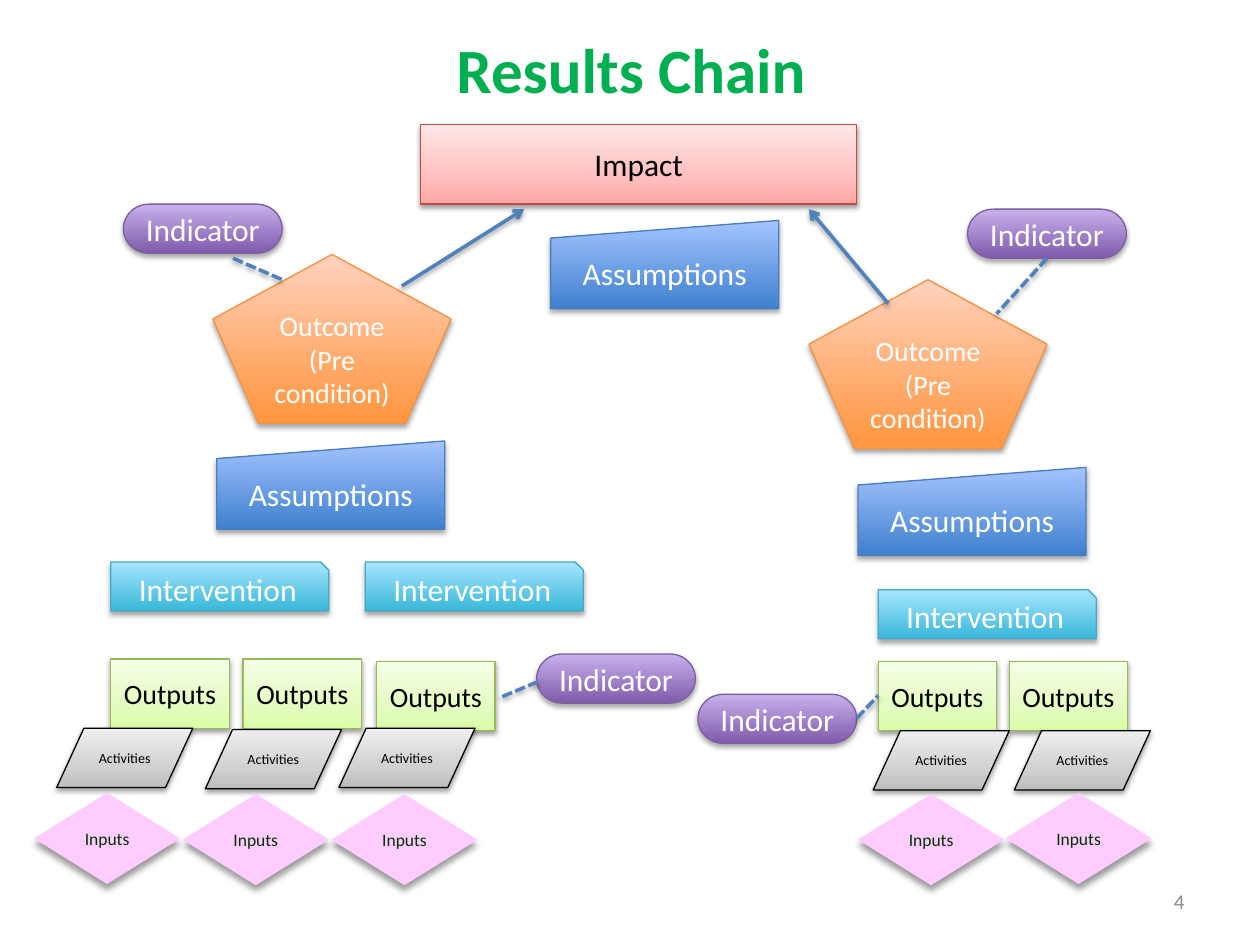
from lxml.etree import SubElement
from pptx import Presentation
from pptx.dml.color import RGBColor
from pptx.enum.dml import MSO_LINE
from pptx.enum.shapes import MSO_CONNECTOR, MSO_SHAPE as S
from pptx.enum.text import MSO_ANCHOR, PP_ALIGN
from pptx.oxml.ns import qn
from pptx.util import Inches, Pt

HUE = {
    "title": "00B050", "page": "8C8C8C", "black": "000000", "white": "FFFFFF",
    "link": "4F81BD", "forest": "003300", "pink": "FFCCFF",
    "red": "BF4C48", "orange": "F69240", "purple": "7D60A0",
    "blue": "4B7EBC", "aqua": "46AAC5", "green": "98B955",
}
# Gradient stops from bottom to top: percent, colour
FADE = {
    "red": [(0, "FFA6A5"), (35, "FFC0BF"), (100, "FFE7E7")],
    "orange": [(0, "FF953E"), (100, "FFD2BD")],
    "purple": [(0, "7F5BAB"), (100, "C8B0ED")],
    "blue": [(0, "3F80CE"), (100, "A4C4FF")],
    "aqua": [(0, "39B7D8"), (100, "A7E6FF")],
    "green": [(0, "DAFDA7"), (35, "E4FCC2"), (100, "F5FFE7")],
    "black": [(0, "BDBDBD"), (35, "D1D1D1"), (100, "EEEEEE")],
}
# Shadows: opacity percent, blur and distance in points
SOFT, DEEP, WIDE = (38, 3.1, 1.6), (35, 3.1, 1.8), (40, 4, 3)

# Each kind of box: text, shape, size, hue, text size, text hue, shadow, spots
KINDS = [
    ("Impact", S.RECTANGLE, (3.46, 0.63), "red", 18, "black", SOFT,
     [(3.34, 0.99)]),
    ("Outcome (Pre condition)", S.REGULAR_PENTAGON, (1.89, 1.34), "orange",
     16, "white", DEEP, [(1.69, 2.02), (6.42, 2.22)]),
    ("Indicator", S.FLOWCHART_TERMINATOR, (1.26, 0.39), "purple", 18, "white",
     DEEP, [(0.98, 1.62), (7.68, 1.66), (4.26, 5.19), (5.54, 5.51)]),
    ("Assumptions", S.FLOWCHART_MANUAL_INPUT, (1.81, 0.7), "blue", 18,
     "white", DEEP, [(4.37, 1.75), (6.81, 3.71), (1.72, 3.5)]),
    ("Intervention", S.SNIP_1_RECTANGLE, (1.73, 0.39), "aqua", 18, "white",
     DEEP, [(0.88, 4.46), (2.9, 4.46), (6.97, 4.68)]),
    ("Outputs", S.RECTANGLE, (0.94, 0.55), "green", 16, "black", SOFT,
     [(0.88, 5.23), (1.93, 5.23), (2.99, 5.25), (6.97, 5.25), (8.01, 5.25)]),
    ("Activities", S.FLOWCHART_DATA, (1.08, 0.47), "black", 8, "black", SOFT,
     [(0.45, 5.78), (1.63, 5.79), (2.69, 5.78), (6.93, 5.8), (8.05, 5.8)]),
    ("Inputs", S.FLOWCHART_DECISION, (1.14, 0.71), "pink", 10, "forest", WIDE,
     [(0.28, 6.3), (1.46, 6.31), (2.64, 6.31), (6.82, 6.31), (7.99, 6.3)]),
]
DASHES = [
    (1.85, 2.05, 2.24, 2.22), (8.31, 2.05, 7.91, 2.49),
    (4.27, 5.41, 3.96, 5.54), (6.8, 5.7, 6.97, 5.52),
]
ARROWS = [(3.19, 2.27, 4.16, 1.66), (7.05, 2.41, 6.42, 1.66)]
# Plain text: words, place, alignment, font
NOTES = [
    ("Results Chain", (0.51, 0.01, 9, 1.06), PP_ALIGN.CENTER,
     {"size": Pt(36), "bold": True}, "title"),
    ("4", (7.17, 6.95, 2.33, 0.4), PP_ALIGN.RIGHT, {"size": Pt(12)}, "page"),
]


def rgb(name):
    return RGBColor.from_string(HUE[name])


def write(box, text, align, font, hue):
    frame = box.text_frame
    frame.word_wrap = True
    frame.vertical_anchor = MSO_ANCHOR.MIDDLE
    para = frame.paragraphs[0]
    para.alignment = align
    run = para.add_run()
    run.text = text
    for key, val in {"name": "Calibri", **font}.items():
        setattr(run.font, key, val)
    run.font.color.rgb = rgb(hue)


def shade(part, look):
    alpha, blur, dist = look
    props = part._element.spPr
    effect = props.find(qn("a:effectLst"))
    if effect is None:
        effect = SubElement(props, qn("a:effectLst"))
    drop = SubElement(effect, qn("a:outerShdw"), blurRad=str(Pt(blur)),
                      dist=str(Pt(dist)), dir="5400000", rotWithShape="0")
    tint = SubElement(drop, qn("a:srgbClr"), val=HUE["black"])
    SubElement(tint, qn("a:alpha"), val=str(alpha * 1000))


def paint(box, hue):
    if hue not in FADE:
        box.fill.solid()
        box.fill.fore_color.rgb = rgb(hue)
        return
    box.fill.gradient()
    box.fill.gradient_angle = 90
    stops = box._element.spPr.find(qn("a:gradFill")).find(qn("a:gsLst"))
    for old in list(stops):
        stops.remove(old)
    for pos, tone in FADE[hue]:
        stop = SubElement(stops, qn("a:gs"), pos=str(pos * 1000))
        SubElement(stop, qn("a:srgbClr"), val=tone)


def draw(shapes, kind):
    text, form, size, hue, points, ink, look, spots = kind
    for spot in spots:
        box = shapes.add_shape(form, *map(Inches, spot + size))
        paint(box, hue)
        box.line.color.rgb = rgb(hue)
        box.line.width = Pt(0.75)
        box.shadow.inherit = False
        shade(box, look)
        write(box, text, PP_ALIGN.CENTER, {"size": Pt(points)}, ink)


def link(shapes, ends, arrow):
    wire = shapes.add_connector(MSO_CONNECTOR.STRAIGHT, *map(Inches, ends))
    wire.line.color.rgb = rgb("link")
    wire.line.width = Pt(2)
    if arrow:
        SubElement(wire.line._get_or_add_ln(), qn("a:tailEnd"), type="arrow")
    else:
        wire.line.dash_style = MSO_LINE.SQUARE_DOT
    shade(wire, SOFT)


def main():
    deck = Presentation()
    deck.slide_width, deck.slide_height = Inches(10), Inches(7.5)
    shapes = deck.slides.add_slide(deck.slide_layouts[6]).shapes

    # Title and page number
    for text, place, align, font, hue in NOTES:
        box = shapes.add_textbox(*map(Inches, place))
        write(box, text, align, font, hue)

    # Boxes of the chain
    for kind in KINDS:
        draw(shapes, kind)

    # Links between boxes
    for ends in DASHES:
        link(shapes, ends, False)
    for ends in ARROWS:
        link(shapes, ends, True)

    deck.save("out.pptx")


if __name__ == "__main__":
    main()
